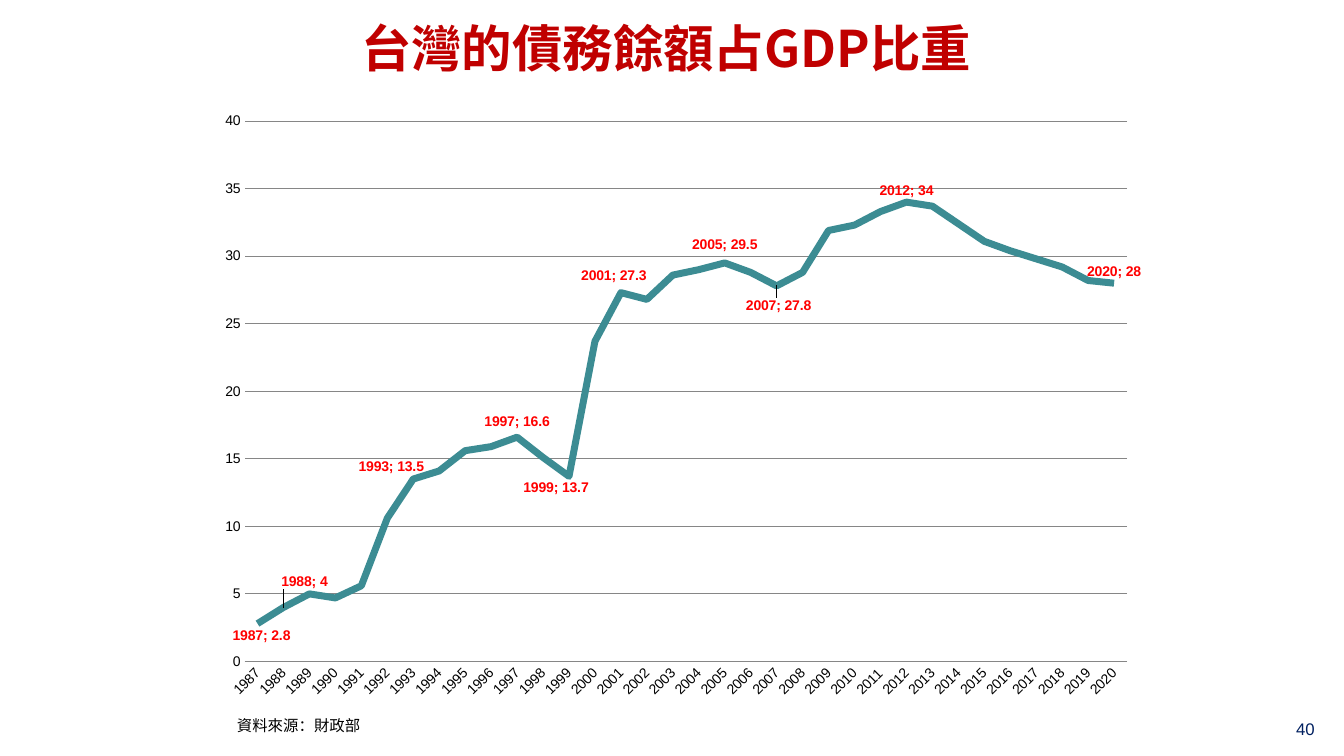
import pptx
import pptx.chart.data
import pptx.dml.color
import pptx.enum.chart
import pptx.enum.text
import pptx.oxml
import pptx.oxml.ns
import pptx.util
import lxml.etree

RED_TITLE = pptx.dml.color.RGBColor(0xC0, 0x00, 0x00)
RED_LABEL = pptx.dml.color.RGBColor(0xFF, 0x00, 0x00)
TEAL = pptx.dml.color.RGBColor(0x3C, 0x8C, 0x93)
NAVY = pptx.dml.color.RGBColor(0x00, 0x20, 0x60)
GRAY = pptx.dml.color.RGBColor(0x86, 0x86, 0x86)
BLACK = pptx.dml.color.RGBColor(0x00, 0x00, 0x00)
LATIN = "Arial"
CJK = "Noto Sans CJK SC"

FIRST_YEAR = 1987
DEBT_RATIOS = [
    2.8, 4, 5, 4.7, 5.6, 10.6, 13.5, 14.1, 15.6, 15.9, 16.6, 15.1,
    13.7, 23.7, 27.3, 26.8, 28.6, 29, 29.5, 28.8, 27.8, 28.8, 31.9,
    32.3, 33.3, 34, 33.7, 32.4, 31.1, 30.4, 29.8, 29.2, 28.2, 28,
]
ABOVE = pptx.enum.chart.XL_LABEL_POSITION.ABOVE
BELOW = pptx.enum.chart.XL_LABEL_POSITION.BELOW
YEAR_LABELS = {
    1987: (BELOW, 4, 0),
    1988: (ABOVE, 21, -14),
    1993: (ABOVE, -22, 0),
    1997: (ABOVE, 0, -4),
    1999: (BELOW, -13, 0),
    2001: (ABOVE, -7, -5),
    2005: (ABOVE, 0, -6),
    2007: (BELOW, 2, 8),
    2012: (ABOVE, 0, 0),
    2020: (ABOVE, 0, 0),
}


def px(length):
    return pptx.util.Emu(round(length * 914400 / 100.8))


def format_font(font, size, color, bold=False, name=LATIN):
    font.size = pptx.util.Pt(size)
    font.bold = bold
    font.name = name
    font.color.rgb = color


def write_run(paragraph, text, size, color, bold=False, name=LATIN):
    run = paragraph.add_run()
    run.text = text
    format_font(run.font, size, color, bold, name)
    if name == CJK:
        properties = run.font._element
        east_asian = lxml.etree.SubElement(properties, pptx.oxml.ns.qn("a:ea"))
        east_asian.set("typeface", name)


def add_title(slide, box):
    title = slide.shapes.title
    title.left, title.top, title.width, title.height = map(px, box)
    frame = title.text_frame
    frame.word_wrap = False
    frame.auto_size = pptx.enum.text.MSO_AUTO_SIZE.NONE
    frame.vertical_anchor = pptx.enum.text.MSO_ANCHOR.MIDDLE
    paragraph = frame.paragraphs[0]
    paragraph.alignment = pptx.enum.text.PP_ALIGN.CENTER
    write_run(paragraph, "台灣的債務餘額占GDP比重", 36, RED_TITLE, True, CJK)


def add_caption(slide, box, text, size, color, name, alignment):
    caption = slide.shapes.add_textbox(*map(px, box))
    caption.text_frame.word_wrap = True
    paragraph = caption.text_frame.paragraphs[0]
    paragraph.alignment = alignment
    write_run(paragraph, text, size, color, name=name)


def make_layout(x, y, size=None):
    fields = [("xMode", "edge"), ("yMode", "edge")] if size else []
    if size:
        fields.insert(0, ("layoutTarget", "inner"))
    fields += [("x", x), ("y", y)]
    if size:
        fields += [("w", size[0]), ("h", size[1])]
    children = "".join(f'<c:{tag} val="{value}"/>' for tag, value in fields)
    return pptx.oxml.parse_xml(
        f'<c:layout {pptx.oxml.ns.nsdecls("c")}>'
        f"<c:manualLayout>{children}</c:manualLayout></c:layout>"
    )


def set_layout(parent, layout, index):
    for old_layout in parent.findall(pptx.oxml.ns.qn("c:layout")):
        parent.remove(old_layout)
    parent.insert(index, layout)


def label_years(series, box):
    labels = series.data_labels
    labels.show_value = False
    for year, (position, shift_x, shift_y) in YEAR_LABELS.items():
        index = year - FIRST_YEAR
        label = series.points[index].data_label
        format_font(label.font, 10, RED_LABEL, True)
        label.position = position
        element = labels._element.xpath(f'c:dLbl[c:idx/@val="{index}"]')[0]
        for tag in ("c:showVal", "c:showCatName"):
            element.find(pptx.oxml.ns.qn(tag)).set("val", "1")
        separator = lxml.etree.SubElement(element, pptx.oxml.ns.qn("c:separator"))
        separator.text = "; "
        if shift_x or shift_y:
            layout = make_layout(round(shift_x / box[2], 4), round(shift_y / box[3], 4))
            set_layout(element, layout, 1)


def format_axes(chart):
    years, ratios = chart.category_axis, chart.value_axis
    for axis in (years, ratios):
        format_font(axis.tick_labels.font, 10, BLACK)
        axis.major_tick_mark = pptx.enum.chart.XL_TICK_MARK.NONE
        axis.minor_tick_mark = pptx.enum.chart.XL_TICK_MARK.NONE
    years.format.line.color.rgb = GRAY
    years._element.find(".//" + pptx.oxml.ns.qn("a:bodyPr")).set("rot", "-2700000")
    ratios.minimum_scale, ratios.maximum_scale, ratios.major_unit = 0, 40, 5
    ratios.tick_labels.number_format = "General"
    ratios.tick_labels.number_format_is_linked = False
    ratios.format.line.fill.background()
    ratios.major_gridlines.format.line.color.rgb = GRAY
    ratios.major_gridlines.format.line.width = pptx.util.Pt(0.75)


def add_debt_chart(slide, box):
    data = pptx.chart.data.CategoryChartData()
    data.categories = [str(FIRST_YEAR + index) for index in range(len(DEBT_RATIOS))]
    data.add_series("Series 1", DEBT_RATIOS)
    chart = slide.shapes.add_chart(
        pptx.enum.chart.XL_CHART_TYPE.LINE, *map(px, box), data
    ).chart
    chart.has_title = False
    chart.has_legend = False
    format_font(chart.font, 10, BLACK)
    format_axes(chart)
    plot = chart.plots[0]
    plot.vary_by_categories = False
    series = plot.series[0]
    series.smooth = False
    series.marker.style = pptx.enum.chart.XL_MARKER_STYLE.NONE
    series.format.line.color.rgb = TEAL
    series.format.line.width = pptx.util.Pt(5)
    label_years(series, box)
    plot_area = plot._element.getparent()
    set_layout(plot_area, make_layout(0.04, 0.033, (0.94, 0.886)), 0)


def main():
    presentation = pptx.Presentation()
    presentation.slide_width = px(1344)
    presentation.slide_height = px(756)
    slide = presentation.slides.add_slide(presentation.slide_layouts[5])
    align = pptx.enum.text.PP_ALIGN
    add_title(slide, (11, 11, 1310, 73))
    add_debt_chart(slide, (207, 101, 939, 610))
    add_caption(slide, (1267, 714, 77, 41), "40", 12, NAVY, LATIN, align.CENTER)
    add_caption(slide, (227, 711, 238, 29), "資料來源：財政部", 11, BLACK, CJK, align.LEFT)
    presentation.save("out.pptx")


if __name__ == "__main__":
    main()
